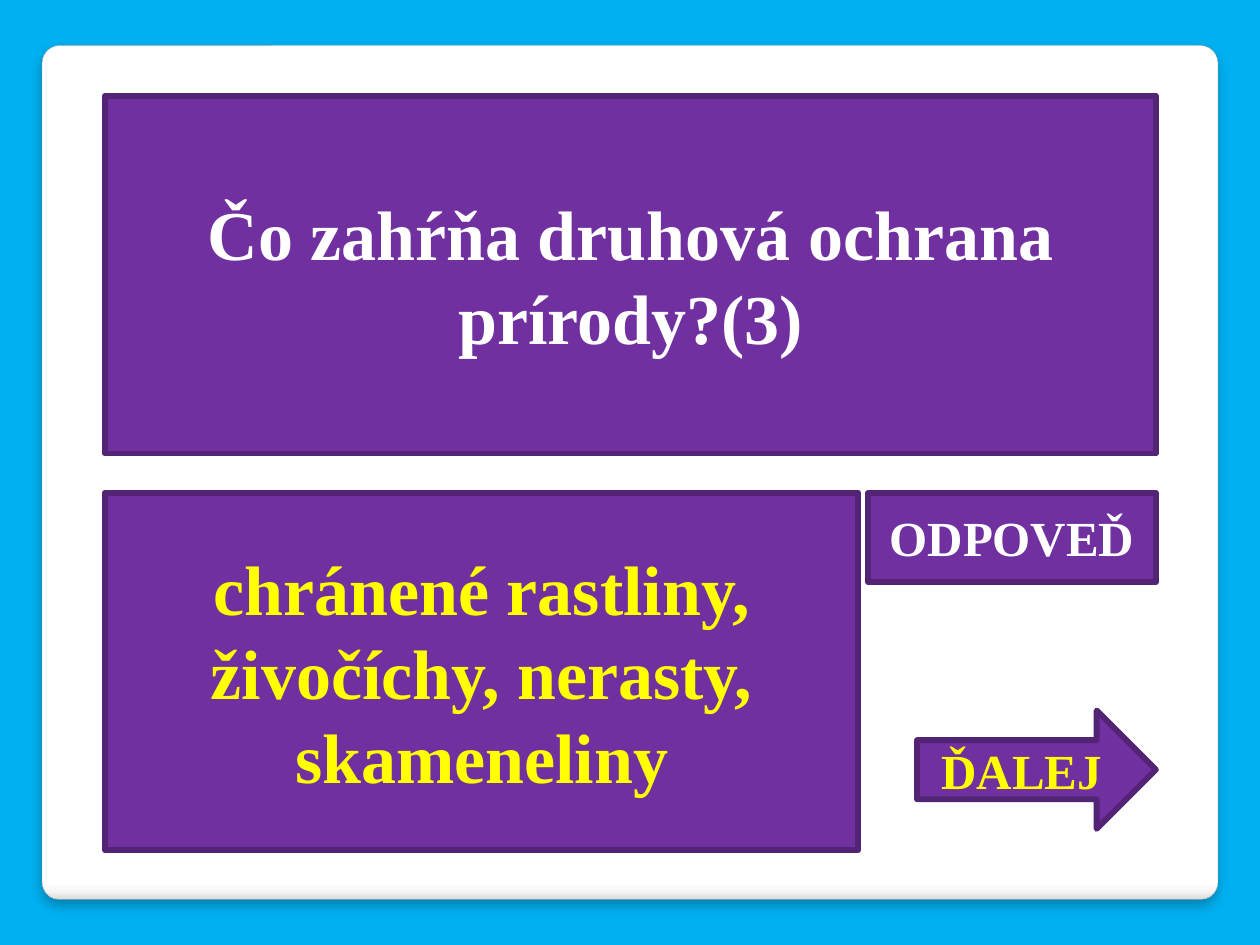
from lxml import etree
from pptx import Presentation
from pptx.dml.color import RGBColor
from pptx.enum.shapes import MSO_SHAPE
from pptx.enum.text import MSO_ANCHOR, PP_ALIGN
from pptx.oxml.ns import qn
from pptx.util import Pt

RECTANGLE = MSO_SHAPE.RECTANGLE
ROUNDED = MSO_SHAPE.ROUNDED_RECTANGLE
ARROW = MSO_SHAPE.RIGHT_ARROW
MIDDLE = MSO_ANCHOR.MIDDLE
CENTER = PP_ALIGN.CENTER

COLORS = {
    "sky": "00B0F0",
    "white": "FFFFFF",
    "mist": "F7F7F7",
    "edge": "DADADA",
    "outline": "A4A4A4",
    "shadow": "000000",
    "purple": "7030A0",
    "plum": "532476",
    "yellow": "FFFF00",
}
FONT = "Times New Roman"
LEFT, RIGHT = 60, 660.5
QUESTION_TOP, ANSWER_TOP, PANEL_HEIGHT = 54.7, 281.5, 204.5


class QuizSlide:
    """Holds the quiz style and the slide being filled."""

    def __init__(self, deck):
        self.slide = deck.slides.add_slide(deck.slide_layouts[6])
        self.paint(self.slide.background.fill, "sky")

    def paint(self, fill, color):
        fill.solid()
        fill.fore_color.rgb = RGBColor.from_string(COLORS[color])

    def shape(self, kind, left, top, width, height, line, weight):
        box = self.slide.shapes.add_shape(kind, Pt(left), Pt(top), Pt(width), Pt(height))
        self.paint(box.line.fill, line)
        box.line.width = Pt(weight)
        box.shadow.inherit = False
        return box

    def card(self, left, top, width, height, stops):
        box = self.shape(ROUNDED, left, top, width, height, "outline", 0.16)
        box.adjustments[0] = 0.021
        box.fill.gradient()
        box.fill.gradient_angle = 270
        properties = box.element.spPr
        stop_list = properties.find(".//" + qn("a:gsLst"))
        for stop in list(stop_list):
            stop_list.remove(stop)
        for percent, color in stops:
            stop = etree.SubElement(stop_list, qn("a:gs"), pos=str(percent * 1000))
            etree.SubElement(stop, qn("a:srgbClr"), val=COLORS[color])
        shadow = etree.SubElement(
            properties.find(qn("a:effectLst")), qn("a:outerShdw"),
            blurRad=str(Pt(6)), dist=str(Pt(4)), dir="5400000", algn="t", rotWithShape="0")
        tint = etree.SubElement(shadow, qn("a:srgbClr"), val=COLORS["shadow"])
        etree.SubElement(tint, qn("a:alpha"), val="25000")

    def panel(self, kind, left, top, width, height, text, size, color):
        box = self.shape(kind, left, top, width, height, "plum", 3.35)
        self.paint(box.fill, "purple")
        etree.SubElement(box.element.spPr.find(qn("a:ln")), qn("a:round"))
        frame = box.text_frame
        frame.word_wrap = True
        frame.vertical_anchor = MIDDLE
        para = frame.paragraphs[0]
        para.alignment = CENTER
        span = para.add_run()
        span.text = text
        span.font.name = FONT
        span.font.size = Pt(size)
        span.font.bold = True
        self.paint(span.font.fill, color)


def main():
    deck = Presentation()
    deck.slide_width, deck.slide_height = Pt(720), Pt(540)
    page = QuizSlide(deck)
    page.card(24, 26, 672, 488, [(0, "white"), (98, "white"), (99, "mist"), (100, "edge")])
    page.panel(RECTANGLE, LEFT, QUESTION_TOP, RIGHT - LEFT, PANEL_HEIGHT,
               "Čo zahŕňa druhová ochrana prírody?(3)", 40, "white")
    page.panel(RECTANGLE, LEFT, ANSWER_TOP, 430.5, PANEL_HEIGHT,
               "chránené rastliny, živočíchy, nerasty, skameneliny", 40, "yellow")
    for kind, top, width, height, text, color in (
        (RECTANGLE, ANSWER_TOP, 164.5, 51, "ODPOVEĎ", "white"),
        (ARROW, 406, 136.5, 67.7, "ĎALEJ", "yellow"),
    ):
        page.panel(kind, RIGHT - width, top, width, height, text, 28, color)
    deck.save("out.pptx")


if __name__ == "__main__":
    main()
